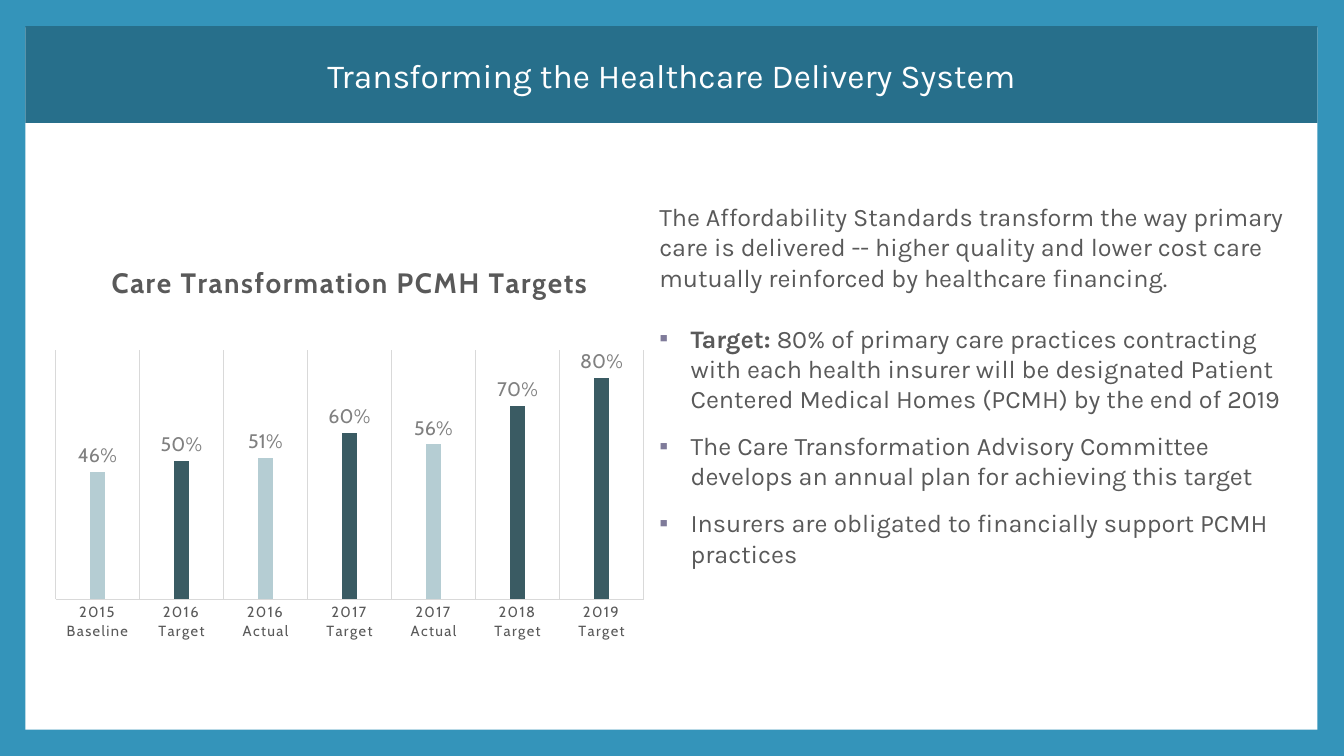
from dataclasses import dataclass

from lxml.etree import SubElement
from pptx import Presentation
from pptx.chart.data import CategoryChartData
from pptx.dml.color import RGBColor
from pptx.enum.chart import XL_CHART_TYPE as ChartType
from pptx.enum.chart import XL_LABEL_POSITION as LabelPosition
from pptx.enum.chart import XL_TICK_MARK as TickMark
from pptx.enum.shapes import MSO_SHAPE as ShapeType
from pptx.enum.text import MSO_ANCHOR as Anchor
from pptx.enum.text import MSO_AUTO_SIZE as AutoSize
from pptx.enum.text import PP_ALIGN as Align
from pptx.oxml.ns import qn
from pptx.util import Cm, Pt


@dataclass(frozen=True)
class Theme:
    border: str = "3494BA"
    band: str = "276F8B"
    white: str = "FFFFFF"
    text: str = "595959"
    bullet: str = "7F7B9A"
    label: str = "808080"
    grid: str = "D9D9D9"
    target: str = "3A5B63"
    measured: str = "B5CDD3"
    text_font: str = "Karla"
    chart_font: str = "Cabin"
    title_size: float = 24
    body_size: float = 18
    chart_title_size: float = 20
    label_size: float = 14
    axis_size: float = 10.5


class SlideBuilder:
    """Holds the theme and the current slide, and adds styled elements to it."""

    def __init__(self, presentation, theme):
        self.theme = theme
        self.slide = presentation.slides.add_slide(presentation.slide_layouts[1])
        self.paint(self.slide.background.fill, theme.border)

    def paint(self, fill, color):
        fill.solid()
        fill.fore_color.rgb = RGBColor.from_string(color)

    def style_font(self, font, name, size, color, bold=False):
        font.name, font.size, font.bold = name, Pt(size), bold
        font.color.rgb = RGBColor.from_string(color)

    def place(self, shape, box):
        shape.left, shape.top, shape.width, shape.height = map(Cm, box)

    def add_panel(self, box):
        panel = self.slide.shapes.add_shape(ShapeType.RECTANGLE, *map(Cm, box))
        panel.shadow.inherit = False
        self.paint(panel.fill, self.theme.white)
        panel.line.fill.background()
        self.slide.shapes._spTree.insert(2, panel._element)

    def add_title(self, text, box):
        title = self.slide.shapes.title
        self.place(title, box)
        self.paint(title.fill, self.theme.band)
        title.text_frame.vertical_anchor = Anchor.MIDDLE
        paragraph = title.text_frame.paragraphs[0]
        paragraph.alignment = Align.CENTER
        self.add_run(paragraph, text, self.theme.title_size, self.theme.white)

    def add_run(self, paragraph, text, size, color, bold=False):
        run = paragraph.add_run()
        run.text = text
        self.style_font(run.font, self.theme.text_font, size, color, bold)

    def add_body(self, items, box):
        body = self.slide.placeholders[1]
        self.place(body, box)
        frame = body.text_frame
        frame.word_wrap, frame.auto_size = True, AutoSize.NONE
        frame.vertical_anchor = Anchor.TOP
        for number, (bulleted, space_after, runs) in enumerate(items):
            paragraph = frame.add_paragraph() if number else frame.paragraphs[0]
            paragraph.alignment = Align.LEFT
            paragraph.space_before, paragraph.space_after = Pt(0), Pt(space_after)
            self.set_bullet(paragraph, bulleted)
            for text, bold in runs:
                self.add_run(paragraph, text, self.theme.body_size, self.theme.text, bold)

    def set_bullet(self, paragraph, bulleted):
        properties = paragraph._p.get_or_add_pPr()
        indent = Cm(0.79) if bulleted else 0
        properties.set("marL", str(indent))
        properties.set("indent", str(-indent))
        if bulleted:
            color = SubElement(properties, qn("a:buClr"))
            SubElement(color, qn("a:srgbClr"), val=self.theme.bullet)
            SubElement(properties, qn("a:buFont"), typeface="Arial")
            SubElement(properties, qn("a:buChar"), char="▪")
        else:
            SubElement(properties, qn("a:buNone"))

    def add_column_chart(self, title, values, box, plot_area):
        theme = self.theme
        data = CategoryChartData(number_format="0%")
        data.categories = list(values)
        data.add_series("Series 1", list(values.values()))
        chart = self.slide.shapes.add_chart(
            ChartType.COLUMN_CLUSTERED, *map(Cm, box), data).chart
        chart.has_legend = False
        self.style_font(chart.font, theme.chart_font, 10, theme.text)
        paragraph = chart.chart_title.text_frame.paragraphs[0]
        run = paragraph.add_run()
        run.text = title
        self.style_font(run.font, theme.chart_font, theme.chart_title_size, theme.text, True)
        self.space_letters(run.font)
        self.style_axes(chart)
        self.style_columns(chart.plots[0], values)
        self.set_plot_area(chart, plot_area)

    def space_letters(self, font):
        font._rPr.set("spc", "100")

    def style_axes(self, chart):
        theme = self.theme
        value_axis, category_axis = chart.value_axis, chart.category_axis
        value_axis.visible = value_axis.has_major_gridlines = False
        value_axis.minimum_scale, value_axis.maximum_scale = 0, 0.9
        category_axis.major_tick_mark = TickMark.NONE
        category_axis.has_major_gridlines = True
        for line in (category_axis.format.line, category_axis.major_gridlines.format.line):
            self.paint(line.fill, theme.grid)
            line.width = Pt(0.75)
        font = category_axis.tick_labels.font
        self.style_font(font, theme.chart_font, theme.axis_size, theme.text)
        self.space_letters(font)

    def style_columns(self, plot, values):
        theme = self.theme
        plot.gap_width, plot.overlap, plot.vary_by_categories = 444, -90, False
        series = plot.series[0]
        self.paint(series.format.fill, theme.border)
        for number, category in enumerate(values):
            color = theme.target if category.endswith("Target") else theme.measured
            self.paint(series.points[number].format.fill, color)
        labels = series.data_labels
        labels.show_value, labels.position = True, LabelPosition.OUTSIDE_END
        labels.number_format, labels.number_format_is_linked = "0%", False
        self.style_font(labels.font, theme.chart_font, theme.label_size, theme.label)

    def set_plot_area(self, chart, plot_area):
        area = chart._chartSpace.chart.plotArea
        for layout in area.findall(qn("c:layout")):
            area.remove(layout)
        layout = SubElement(area, qn("c:layout"))
        area.insert(0, layout)
        manual = SubElement(layout, qn("c:manualLayout"))
        settings = {"layoutTarget": "inner", "xMode": "edge", "yMode": "edge"}
        settings.update(zip("xywh", map(str, plot_area)))
        for tag, value in settings.items():
            SubElement(manual, qn(f"c:{tag}"), val=value)


def main():
    presentation = Presentation()
    presentation.slide_width, presentation.slide_height = Cm(33.87), Cm(19.05)
    builder = SlideBuilder(presentation, Theme())
    builder.add_panel((0.64, 0.69, 32.56, 17.7))
    builder.add_title("Transforming the Healthcare Delivery System", (0.64, 0.66, 32.56, 2.44))
    builder.add_body([
        (False, 22, [("The Affordability Standards transform the way primary care is delivered "
                      "-- higher quality and lower cost care mutually reinforced by "
                      "healthcare financing.", False)]),
        (True, 12, [("Target:", True),
                    (" 80% of primary care practices contracting with each health insurer "
                     "will be designated Patient Centered Medical Homes (PCMH) by the end "
                     "of 2019", False)]),
        (True, 12, [("The Care Transformation Advisory Committee develops an annual plan "
                     "for achieving this target", False)]),
        (True, 0, [("Insurers are obligated to financially support PCMH practices", False)]),
    ], (16.36, 4.95, 16.76, 11.53))
    builder.add_column_chart("Care Transformation PCMH Targets", {
        "2015 Baseline": 0.46, "2016 Target": 0.5, "2016 Actual": 0.51,
        "2017 Target": 0.6, "2017 Actual": 0.56, "2018 Target": 0.7, "2019 Target": 0.8,
    }, (1.09, 6.15, 15.44, 10.29), (0.02, 0.26, 0.96, 0.61))
    presentation.save("out.pptx")


if __name__ == "__main__":
    main()
